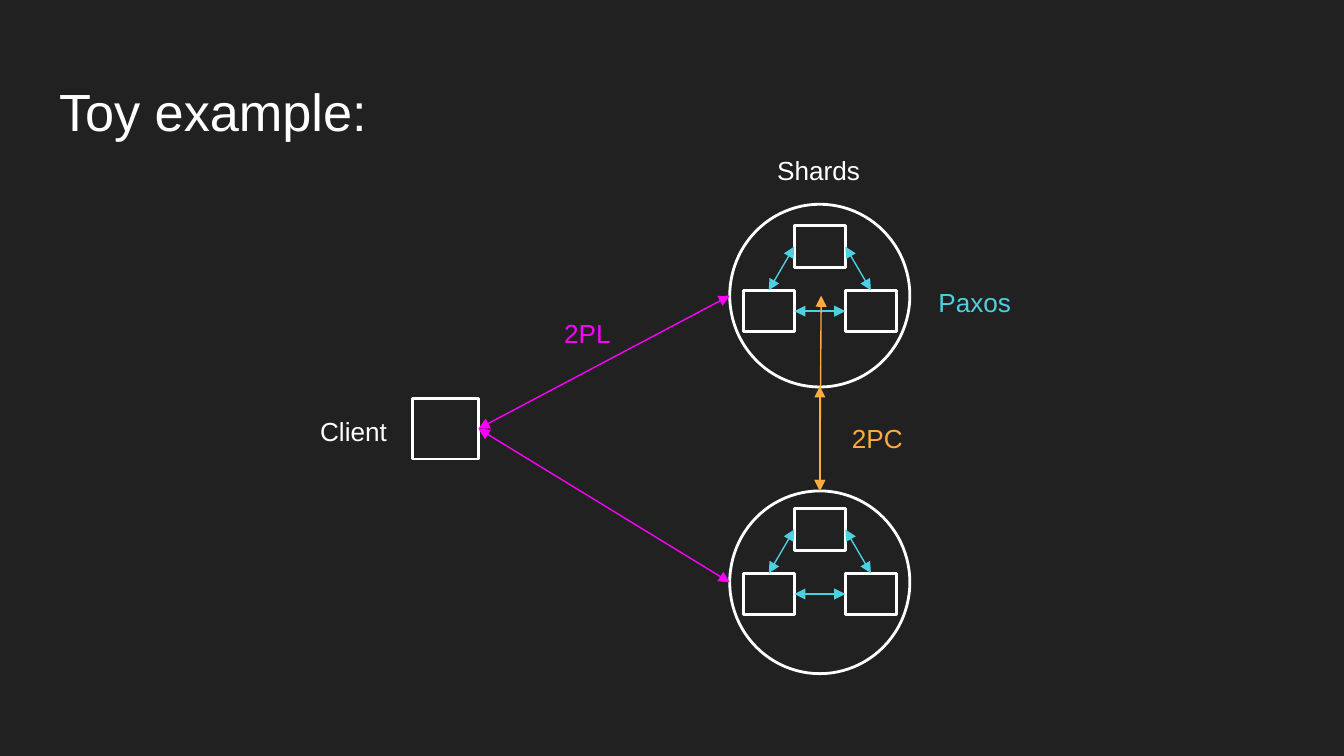
from lxml import etree
from pptx import Presentation
from pptx.dml.color import RGBColor
from pptx.enum.shapes import MSO_CONNECTOR, MSO_SHAPE
from pptx.enum.text import MSO_ANCHOR
from pptx.oxml.ns import qn
from pptx.util import Inches, Pt

RECT, OVAL = MSO_SHAPE.RECTANGLE, MSO_SHAPE.OVAL
LINE, TOP = MSO_CONNECTOR.STRAIGHT, MSO_ANCHOR.TOP

DARK = RGBColor(0x21, 0x21, 0x21)
WHITE = RGBColor(0xFF, 0xFF, 0xFF)
PINK = RGBColor(0xFF, 0x00, 0xFF)
ORANGE = RGBColor(0xFF, 0xAB, 0x40)
CYAN = RGBColor(0x4D, 0xD0, 0xE1)

# The grid has square cells: 100 columns by 56.25 rows.
CELL = Inches(0.1)
COLS, ROWS = 100, 56.25
MID = 61            # column of the shards' centres
RING_W, RING_H = 13.4, 13.6
NODE_W, NODE_H = 3.8, 3.1
DROP = 4.8          # rows from the top node to the lower pair


def grid(*cells):
    return [round(n * CELL) for n in cells]


def add_label(slide, text, col, row, wide, color=WHITE, size=14, high=3.1):
    box = slide.shapes.add_textbox(*grid(col, row, wide, high))
    frame = box.text_frame
    frame.text = text
    frame.word_wrap = True
    frame.vertical_anchor = TOP
    frame.margin_left = frame.margin_right = CELL
    frame.margin_top = frame.margin_bottom = CELL
    font = frame.paragraphs[0].runs[0].font
    font.name, font.size, font.color.rgb = "Arial", Pt(size), color


def add_outline(slide, kind, col, row, wide, high):
    shape = slide.shapes.add_shape(kind, *grid(col, row, wide, high))
    shape.shadow.inherit = False
    shape.line.color.rgb = WHITE
    shape.line.width = Pt(1.5)
    if kind == OVAL:
        shape.fill.background()
    else:
        shape.fill.solid()
        shape.fill.fore_color.rgb = DARK


def add_arrow(slide, start, end, color):
    """Draw a line with an arrowhead at both ends."""
    arrow = slide.shapes.add_connector(LINE, *grid(*start, *end))
    arrow.line.color.rgb = color
    arrow.line.width = Pt(0.75)
    line = arrow.line._get_or_add_ln()
    for tag in ("a:headEnd", "a:tailEnd"):
        etree.SubElement(line, qn(tag), type="triangle")
    etree.SubElement(arrow._element.spPr, qn("a:effectLst"))


def add_nodes(slide, top):
    """Draw three replicas and the arrows that join them."""
    half = NODE_W / 2
    low = top + DROP
    add_outline(slide, RECT, MID - half, top, NODE_W, NODE_H)
    for side in (-1, 1):
        mid = MID + side * NODE_W
        add_outline(slide, RECT, mid - half, low, NODE_W, NODE_H)
        add_arrow(slide, (mid, low),
                  (MID + side * half, top + NODE_H / 2), CYAN)
    row = low + NODE_H / 2
    add_arrow(slide, (MID - half, row), (MID + half, row), CYAN)


def main():
    deck = Presentation()
    deck.slide_width, deck.slide_height = grid(COLS, ROWS)
    slide = deck.slides.add_slide(deck.slide_layouts[6])
    slide.background.fill.solid()
    slide.background.fill.fore_color.rgb = DARK

    add_label(slide, "Toy example:", 3.41, 4.9, 93.2, size=28, high=6.3)
    add_outline(slide, RECT, 30.7, 29.65, 4.9, 4.5)

    left = MID - RING_W / 2
    for ring, nodes in ((15.2, 16.8), (36.53, 37.85)):
        add_outline(slide, OVAL, left, ring, RING_W, RING_H)
        add_arrow(slide, (35.6, 31.9), (left, ring + RING_H / 2), PINK)
        add_nodes(slide, nodes)

    for start in ((MID + 0.1, 22), (MID, 28.75)):
        add_arrow(slide, start, (MID, 36.53), ORANGE)

    add_label(slide, "Client", 22.84, 29.9, 7.3)
    add_label(slide, "2PL", 41, 22.6, 7.3, PINK)
    add_label(slide, "2PC", 62.4, 30.4, 7.3, ORANGE)
    add_label(slide, "Shards", 56.84, 10.5, 8.3)
    add_label(slide, "Paxos", 68.84, 20.3, 8.3, CYAN)

    deck.save("out.pptx")


if __name__ == "__main__":
    main()
